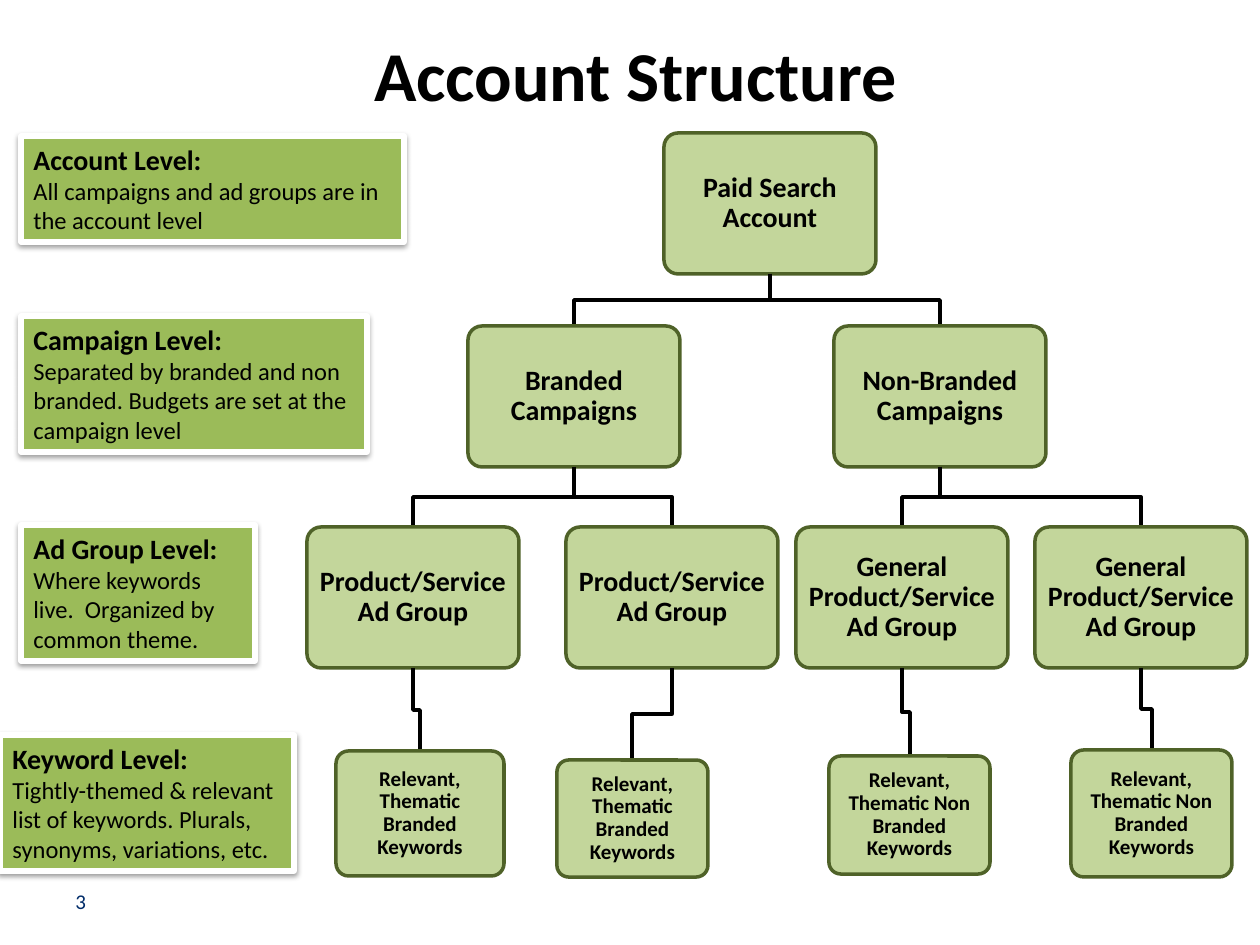
from lxml.etree import SubElement as Sub
from pptx import Presentation
from pptx.dml.color import RGBColor as Rgb
from pptx.enum.shapes import MSO_SHAPE as Shape
from pptx.enum.text import MSO_ANCHOR as Anchor, MSO_AUTO_SIZE as Fit, PP_ALIGN as Align
from pptx.oxml.ns import qn
from pptx.util import Pt

PX = 914400 / 126
THEME = {
    "font": "Calibri",
    "ink": "000000", "navy": "002C69", "white": "FFFFFF",
    "node": "C3D69B", "edge": "4F6228", "note": "9BBB59",
    "title": 40, "head": 16, "body": 14, "small": 12,
}


def px(*sizes):
    return [round(n * PX) for n in sizes]


def write(para, text, size, bold=False, ink="ink"):
    run = para.add_run()
    run.text = text
    look = {"name": THEME["font"], "size": Pt(THEME[size]), "bold": bold}
    for key, val in look.items():
        setattr(run.font, key, val)
    run.font.color.rgb = Rgb.from_string(THEME[ink])


deck = Presentation()
deck.slide_width, deck.slide_height = px(1260, 945)
slide = deck.slides.add_slide(deck.slide_layouts[6])
shapes = slide.shapes

# Title and page number
labels = [
    ((42, 42, 1187, 63), "Account Structure", "title", True, "ink", Align.CENTER),
    ((63, 876, 294, 50), "3", "small", False, "navy", Align.LEFT),
]
for rect, text, size, bold, ink, align in labels:
    frame = shapes.add_textbox(*px(*rect)).text_frame
    frame.word_wrap = True
    frame.vertical_anchor = Anchor.MIDDLE
    frame.paragraphs[0].alignment = align
    write(frame.paragraphs[0], text, size, bold, ink)

# Account tree: text, row in the list of its parent, rectangle
product = "Product/Service Ad Group"
general = "General Product/Service Ad Group"
brand = "Relevant, Thematic Branded Keywords"
other = "Relevant, Thematic Non Branded Keywords"
BOX = (212, 141)
tree = [
    ("Paid Search Account", None, (664, 133, *BOX)),
    ("Branded Campaigns", 0, (468, 326, *BOX)),
    ("Non-Branded Campaigns", 0, (834, 326, *BOX)),
    (product, 1, (307, 527, *BOX)),
    (product, 1, (566, 527, *BOX)),
    (general, 2, (796, 527, *BOX)),
    (general, 2, (1035, 527, *BOX)),
    (brand, 3, (336, 751, 168, 125)),
    (brand, 4, (557, 760, 151, 117)),
    (other, 5, (829, 756, 161, 118)),
    (other, 6, (1071, 750, 161, 127)),
]
for text, up, (left, top, wide, high) in tree:
    if up is not None:
        x, y, w, h = tree[up][2]
        start, end = x + w / 2, left + wide / 2
        mid = (y + h + top) / 2
        pen = shapes.build_freeform(start, y + h, scale=PX)
        pen.add_line_segments([(start, mid), (end, mid), (end, top)], close=False)
        link = pen.convert_to_shape()
        link.shadow.inherit = False
        link.fill.background()
        link.line.color.rgb = Rgb.from_string(THEME["ink"])
        link.line.width = Pt(2)

    node = shapes.add_shape(Shape.ROUNDED_RECTANGLE, *px(left, top, wide, high))
    node.adjustments[0] = 0.1
    node.shadow.inherit = False
    node.fill.solid()
    node.fill.fore_color.rgb = Rgb.from_string(THEME["node"])
    node.line.color.rgb = Rgb.from_string(THEME["edge"])
    node.line.width = Pt(2)
    leaf = wide < BOX[0]
    frame = node.text_frame
    for side in ("left", "top", "right", "bottom"):
        setattr(frame, f"margin_{side}", px(6 if leaf else 8)[0])
    frame.word_wrap = True
    frame.vertical_anchor = Anchor.MIDDLE
    para = frame.paragraphs[0]
    para.alignment = Align.CENTER
    para.line_spacing = 0.9
    write(para, text, "small" if leaf else "head", True)

# Level notes: rectangle, heading, body, body in its own paragraph
notes = [
    ((21, 136, 383, 106), "Account Level:",
     "All campaigns and ad groups are in the account level", True),
    ((21, 316, 346, 136), "Campaign Level:",
     "Separated by branded and non branded. Budgets are set at the campaign level", True),
    ((21, 525, 234, 136), "Ad Group Level: ",
     "Where keywords live.  Organized by common theme.", False),
    ((0, 735, 294, 136), "Keyword Level:",
     "Tightly-themed & relevant list of keywords. Plurals, synonyms, variations, etc.", True),
]
for rect, head, body, split in notes:
    note = shapes.add_shape(Shape.RECTANGLE, *px(*rect))
    note.fill.solid()
    note.fill.fore_color.rgb = Rgb.from_string(THEME["note"])
    note.line.color.rgb = Rgb.from_string(THEME["white"])
    note.line.width = Pt(3)
    note.shadow.inherit = False
    glow = Sub(note.element.spPr.find(qn("a:effectLst")), qn("a:outerShdw"),
               blurRad=str(Pt(3.1)), dist=str(Pt(1.6)), dir="5400000", rotWithShape="0")
    tint = Sub(glow, qn("a:srgbClr"), val=THEME["ink"])
    Sub(tint, qn("a:alpha"), val="38000")
    frame = note.text_frame
    frame.word_wrap = True
    frame.auto_size = Fit.SHAPE_TO_FIT_TEXT
    frame.vertical_anchor = Anchor.TOP
    first = frame.paragraphs[0]
    write(first, head, "head", True)
    write(frame.add_paragraph() if split else first, body, "body")
    for para in frame.paragraphs:
        para.alignment = Align.LEFT

deck.save("out.pptx")
